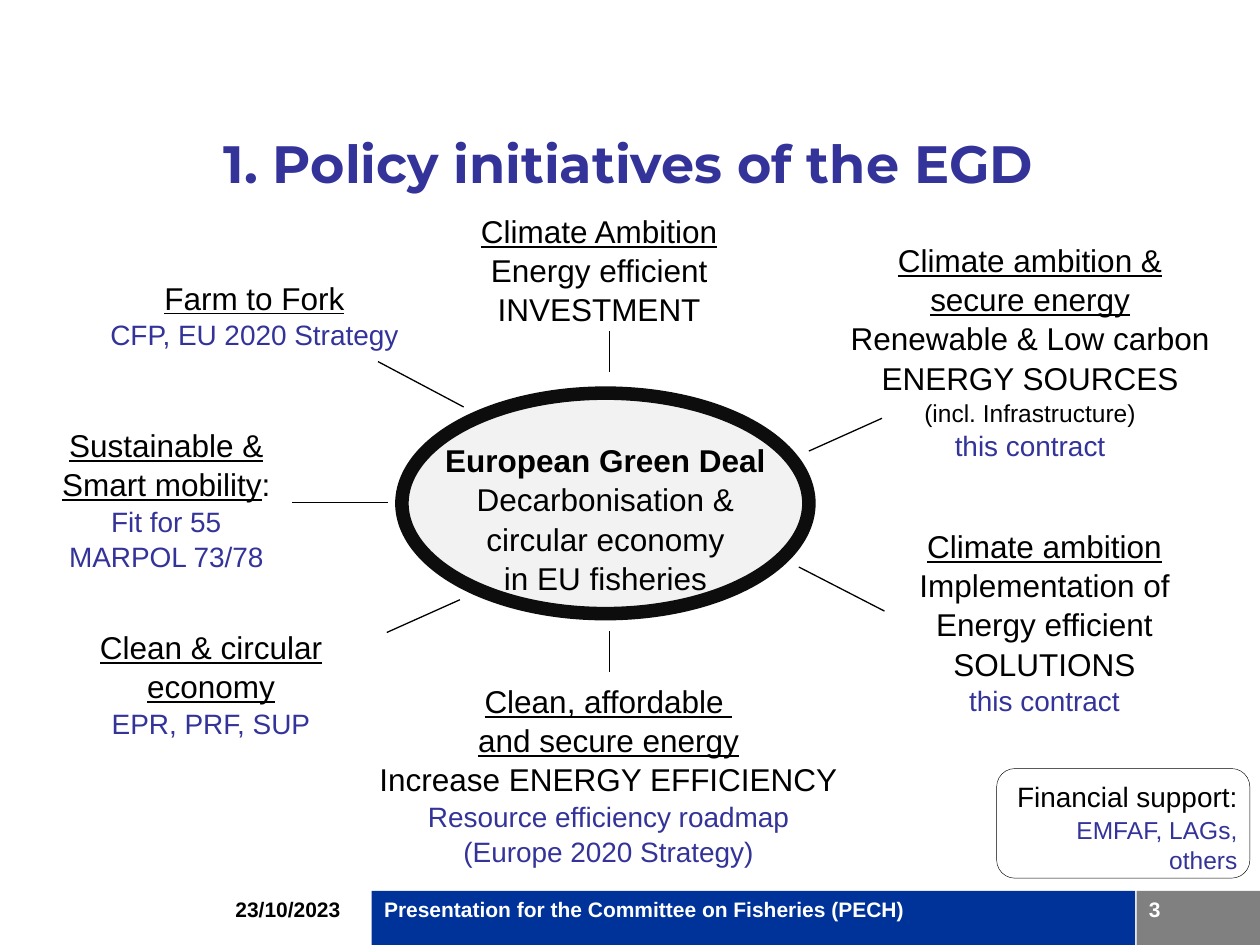
from pptx import Presentation
from pptx.dml.color import RGBColor
from pptx.enum.shapes import MSO_CONNECTOR, MSO_SHAPE
from pptx.enum.text import MSO_ANCHOR, MSO_AUTO_SIZE, PP_ALIGN
from pptx.oxml.ns import qn
from pptx.util import Inches, Pt
from lxml.etree import SubElement

BLACK, WHITE, INDIGO = "000000", "FFFFFF", "333399"

# Text styles: size, colour, bold, underline
HEADING = (18, BLACK, False, True)
PLAIN = (18, BLACK, False, False)
STRONG = (18, BLACK, True, False)
DETAIL = (14, BLACK, False, False)
NOTE = (16, INDIGO, False, False)
FOOTER = (12, WHITE, True, False)


def color(value):
    return RGBColor.from_string(value)


class SlideBuilder:
    font_name = "Arial"
    line_spacing = 1.04

    def __init__(self, slide):
        self.slide = slide

    def format_run(self, run, style, font_name=None):
        size, text_color, bold, underline = style
        run.font.name = font_name or self.font_name
        run.font.size = Pt(size)
        run.font.color.rgb = color(text_color)
        run.font.bold = bold
        run.font.underline = underline

    def fill_text(self, shape, paragraphs, alignment, line_spacing):
        """Each paragraph is a list of (text, style) runs."""
        text_frame = shape.text_frame
        text_frame.word_wrap = True
        text_frame.vertical_anchor = MSO_ANCHOR.TOP
        for index, runs in enumerate(paragraphs):
            paragraph = text_frame.add_paragraph() if index else text_frame.paragraphs[0]
            paragraph.alignment = alignment
            paragraph.line_spacing = line_spacing
            for text, style in runs:
                run = paragraph.add_run()
                run.text = text
                self.format_run(run, style)

    def title(self, box, text, style, font_name):
        shape = self.slide.shapes.title
        shape.left, shape.top, shape.width, shape.height = map(Inches, box)
        text_frame = shape.text_frame
        text_frame.text = text
        text_frame.auto_size = MSO_AUTO_SIZE.NONE
        text_frame.vertical_anchor = MSO_ANCHOR.TOP
        paragraph = text_frame.paragraphs[0]
        paragraph.alignment = PP_ALIGN.CENTER
        self.format_run(paragraph.runs[0], style, font_name)

    def text(self, box, paragraphs, alignment=PP_ALIGN.CENTER, line_spacing=line_spacing):
        shape = self.slide.shapes.add_textbox(*map(Inches, box))
        self.fill_text(shape, paragraphs, alignment, line_spacing)

    def shape(self, kind, box, fill=None, line=None, line_width=0.75):
        shape = self.slide.shapes.add_shape(kind, *map(Inches, box))
        shape.shadow.inherit = False
        if fill:
            shape.fill.solid()
            shape.fill.fore_color.rgb = color(fill)
        else:
            shape.fill.background()
        if line:
            shape.line.color.rgb = color(line)
            shape.line.width = Pt(line_width)
        else:
            shape.line.fill.background()
        return shape

    def footer_bar(self, box, fill, text):
        bar = self.shape(MSO_SHAPE.RECTANGLE, box, fill)
        self.fill_text(bar, [[(text, FOOTER)]], PP_ALIGN.LEFT, 1.0)

    def line(self, start, end):
        connector = self.slide.shapes.add_connector(
            MSO_CONNECTOR.STRAIGHT, *map(Inches, start + end))
        connector.line.color.rgb = color(BLACK)
        connector.line.width = Pt(0.75)
        SubElement(connector._element.spPr, qn("a:effectLst"))


def main():
    presentation = Presentation()
    presentation.slide_width, presentation.slide_height = Inches(10), Inches(7.5)
    builder = SlideBuilder(presentation.slides.add_slide(presentation.slide_layouts[5]))

    # Title
    builder.title((0.49, 0.99, 9, 0.87), "1. Policy initiatives of the EGD",
                  (30, INDIGO, True, False), "Montserrat")

    # Footer
    footer_top, footer_height = 7.07, 0.43
    builder.text((1.77, footer_top, 1.1, footer_height),
                 [[("23/10/2023", (12, BLACK, True, False))]], PP_ALIGN.LEFT, 1.0)
    builder.footer_bar((2.95, footer_top, 6.06, footer_height), "003399",
                       "Presentation for the Committee on Fisheries (PECH)")
    builder.footer_bar((9.02, footer_top, 0.98, footer_height), "808080", "3")

    # Central ellipse
    builder.shape(MSO_SHAPE.OVAL, (3.19, 3.12, 3.23, 1.75), "F2F2F2", "0D0D0D", 7.75)
    builder.text((3.27, 3.44, 3.07, 1.31), [
        [("European Green Deal", STRONG)],
        [("Decarbonisation & circular economy", PLAIN)],
        [("in EU fisheries", PLAIN)]])

    # Initiatives, clockwise from the top
    initiatives = [
        ((3.22, 1.62, 3.07, 1.01), [
            [("Climate Ambition", HEADING)],
            [("Energy efficient INVESTMENT", PLAIN)]]),
        ((6.48, 1.85, 3.39, 1.85), [
            [("Climate ambition &", HEADING)],
            [("secure energy", HEADING)],
            [("Renewable & Low carbon ENERGY SOURCES", PLAIN)],
            [("(incl. Infrastructure)", DETAIL)],
            [("this contract", NOTE)]]),
        ((6.86, 4.12, 2.86, 1.92), [
            [("Climate ambition", HEADING)],
            [("Implementation of Energy efficient SOLUTIONS", PLAIN)],
            [("this contract", NOTE)]]),
        ((2.88, 5.35, 3.9, 1.55), [
            [("Clean, affordable ", HEADING)],
            [("and secure energy", HEADING)],
            [("Increase ENERGY EFFICIENCY", PLAIN)],
            [("Resource efficiency roadmap (Europe 2020 Strategy)", NOTE)]]),
        ((0.13, 4.92, 3.09, 1.01), [
            [("Clean & circular", HEADING)],
            [("economy", HEADING)],
            [("EPR, PRF, SUP", NOTE)]]),
        ((-0.11, 3.32, 2.86, 1.25), [
            [("Sustainable &", HEADING)],
            [("Smart mobility", HEADING), (":", PLAIN)],
            [("Fit for 55", NOTE)],
            [("MARPOL 73/78", NOTE)]]),
        ((0.59, 2.15, 2.86, 0.67), [
            [("Farm to Fork", HEADING)],
            [("CFP, EU 2020 Strategy", NOTE)]]),
    ]
    for box, paragraphs in initiatives:
        builder.text(box, paragraphs)

    # Lines between the ellipse and the initiatives, clockwise from the top
    spokes = [
        ((4.84, 2.63), (4.84, 2.95)),
        ((6.42, 3.58), (7, 3.32)),
        ((6.34, 4.5), (7.02, 4.85)),
        ((4.84, 5.01), (4.84, 5.33)),
        ((3.07, 5.02), (3.65, 4.76)),
        ((2.32, 3.99), (3.08, 3.99)),
        ((3, 2.87), (3.68, 3.23)),
    ]
    for start, end in spokes:
        builder.line(start, end)

    # Financial support
    builder.text((7.91, 6.13, 2.01, 0.84), [
        [("Financial support:", (16, BLACK, False, False))],
        [("EMFAF, LAGs, others", (14, INDIGO, False, False))]], PP_ALIGN.RIGHT)
    builder.shape(MSO_SHAPE.ROUNDED_RECTANGLE, (7.91, 6.1, 2.01, 0.87),
                  line=BLACK, line_width=0.25)

    presentation.save("out.pptx")


if __name__ == "__main__":
    main()
